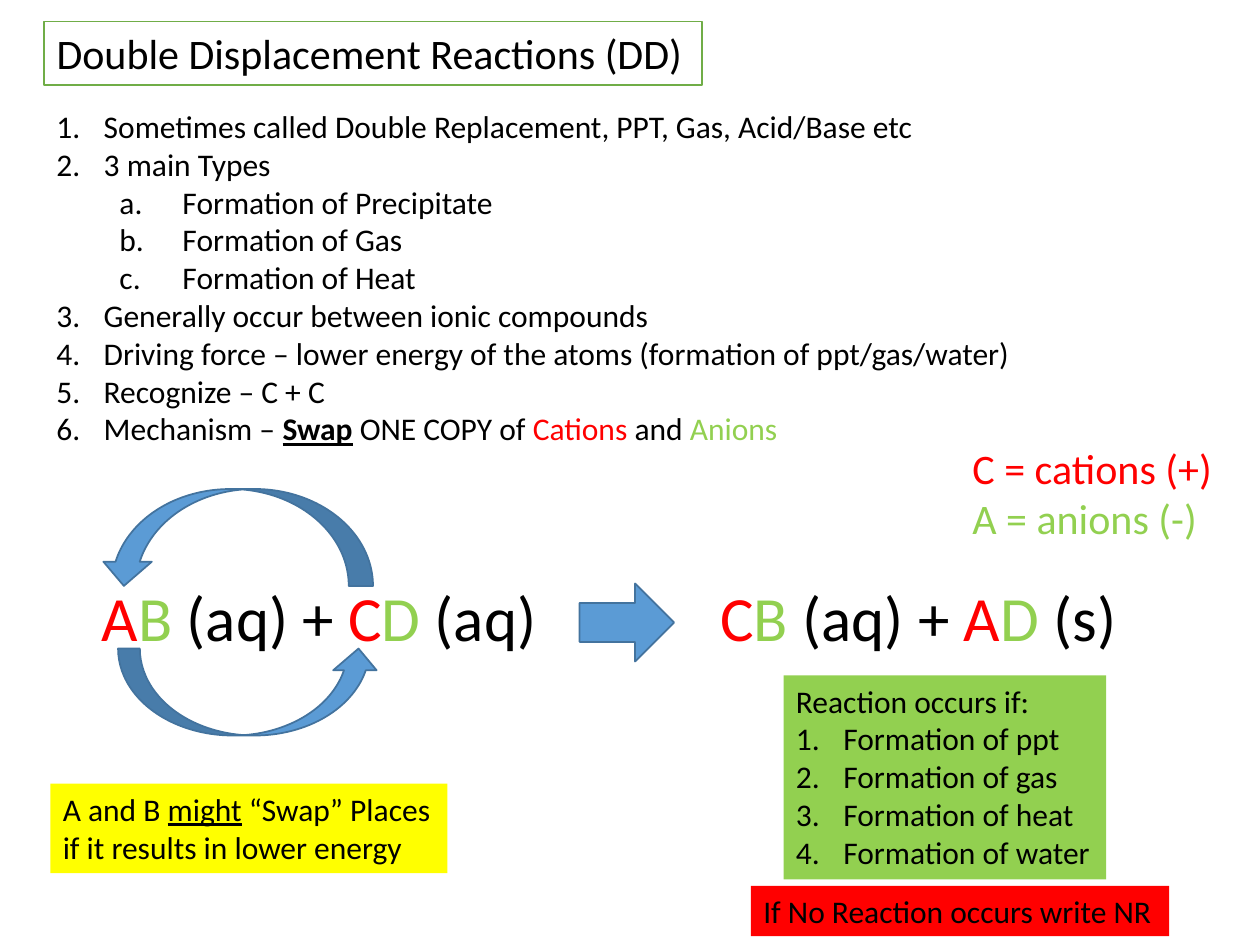
from dataclasses import dataclass
from typing import Optional

from lxml.etree import SubElement
from pptx import Presentation
from pptx.dml.color import RGBColor
from pptx.enum.shapes import MSO_SHAPE as Preset
from pptx.enum.text import MSO_AUTO_SIZE as AutoSize
from pptx.oxml.ns import qn
from pptx.util import Pt

BLACK, RED, GREEN, YELLOW, WHITE = "000000", "FF0000", "92D050", "FFFF00", "FFFFFF"
ARROW_FILL, ARROW_LINE, TITLE_LINE = "5B9BD5", "43739E", "70AD47"
INDENT_STEP, HANGING = 36, 27


@dataclass
class Run:
    text: str
    color: str = BLACK
    bold: bool = False
    underline: bool = False


@dataclass
class Line:
    runs: list[Run]
    numbering: Optional[str] = None
    level: int = 0


@dataclass
class TextBlock:
    box: tuple[float, float, float, float]
    size: int
    lines: list[Line]
    fill: Optional[str] = None
    outline: Optional[str] = None
    wrap: bool = False


@dataclass
class Arrow:
    preset: Preset
    box: tuple[float, float, float, float]
    rotation: int = 0


def rgb(color: str) -> RGBColor:
    return RGBColor.from_string(color)


def plain(text: str, color: str = BLACK) -> Line:
    return Line([Run(text, color)])


def numbered(*texts: str) -> list[Line]:
    return [Line([Run(text)], "arabicPeriod") for text in texts]


def lettered(*texts: str) -> list[Line]:
    return [Line([Run("\t" + text)], "alphaLcPeriod", 1) for text in texts]


def formula(first: str, second: str, state: str) -> Line:
    """Colour the cation and anion of two compounds such as AB + CD."""
    return Line([Run(first[0], RED), Run(first[1], GREEN), Run(" (aq) + "),
                 Run(second[0], RED), Run(second[1], GREEN), Run(f" ({state})")])


def set_numbering(paragraph, line: Line) -> None:
    paragraph.level = line.level
    properties = paragraph._p.get_or_add_pPr()
    properties.set("marL", str(Pt(HANGING + line.level * INDENT_STEP)))
    properties.set("indent", str(-Pt(HANGING)))
    SubElement(properties, qn("a:buFont"), typeface="+mj-lt")
    SubElement(properties, qn("a:buAutoNum"), type=line.numbering)


def draw_text(shapes, block: TextBlock) -> None:
    shape = shapes.add_textbox(*map(Pt, block.box))
    if block.fill:
        shape.fill.solid()
        shape.fill.fore_color.rgb = rgb(block.fill)
    if block.outline:
        shape.line.color.rgb = rgb(block.outline)
        shape.line.width = Pt(1)
    frame = shape.text_frame
    frame.word_wrap = block.wrap
    frame.auto_size = AutoSize.SHAPE_TO_FIT_TEXT
    for index, line in enumerate(block.lines):
        paragraph = frame.add_paragraph() if index else frame.paragraphs[0]
        if line.numbering:
            set_numbering(paragraph, line)
        for part in line.runs:
            run = paragraph.add_run()
            run.text = part.text
            font_format = {"name": "Calibri", "size": Pt(block.size),
                           "bold": part.bold, "underline": part.underline}
            for name, value in font_format.items():
                setattr(run.font, name, value)
            run.font.color.rgb = rgb(part.color)


def draw_arrow(shapes, arrow: Arrow) -> None:
    shape = shapes.add_shape(arrow.preset, *map(Pt, arrow.box))
    shape.shadow.inherit = False
    shape.rotation = arrow.rotation
    shape.fill.solid()
    shape.fill.fore_color.rgb = rgb(ARROW_FILL)
    shape.line.color.rgb = rgb(ARROW_LINE)
    shape.line.width = Pt(1)


TITLE = TextBlock((25.2, 12.3, 375.8, 36.2), 24,
                  [plain("Double Displacement Reactions (DD)")], WHITE, TITLE_LINE)
NOTES = TextBlock((25.2, 57.6, 669.6, 203.8), 18, [
    *numbered("Sometimes called Double Replacement, PPT, Gas, Acid/Base etc",
              "3 main Types"),
    *lettered("Formation of Precipitate", "Formation of Gas", "Formation of Heat"),
    *numbered("Generally occur between ionic compounds",
              "Driving force – lower energy of the atoms (formation of ppt/gas/water)",
              "Recognize – C + C"),
    Line([Run("Mechanism – "), Run("Swap", bold=True, underline=True),
          Run(" ONE COPY of "), Run("Cations", RED), Run(" and "),
          Run("Anions", GREEN)], "arabicPeriod"),
], wrap=True)
LEGEND = TextBlock((548.6, 249.1, 152.6, 65.5), 24,
                   [plain("C = cations (+)", RED), plain("A = anions (-)", GREEN)])
SWAP_NOTE = TextBlock((28.8, 447.8, 226.8, 51.1), 18, [
    Line([Run("A and B "), Run("might", underline=True), Run(" “Swap” Places")]),
    plain("if it results in lower energy"),
], YELLOW)
CONDITIONS = TextBlock((447.8, 385.9, 184.3, 116.6), 18, [
    plain("Reaction occurs if:"),
    *numbered("Formation of ppt", "Formation of gas",
              "Formation of heat", "Formation of water"),
], GREEN)
NO_REACTION = TextBlock((429.1, 506.2, 239, 28.8), 18,
                        [plain("If No Reaction occurs write NR")], RED)

REACTANTS = TextBlock((51.1, 326.9, 272.9, 51.1), 36,
                      [formula("AB", "CD", "aq")], wrap=True)
PRODUCTS = TextBlock((404.6, 326.9, 242.6, 51.1), 36,
                     [formula("CB", "AD", "s")], wrap=True)
ARROWS = [
    Arrow(Preset.RIGHT_ARROW, (331.2, 333.4, 54, 44.6)),
    Arrow(Preset.CURVED_UP_ARROW, (67.5, 370.6, 149.8, 49.7)),
    Arrow(Preset.CURVED_UP_ARROW, (56.9, 279.4, 156.2, 55.4), 180),
]


def main() -> None:
    presentation = Presentation()
    presentation.slide_width, presentation.slide_height = Pt(720), Pt(540)
    slide = presentation.slides.add_slide(presentation.slide_layouts[6])
    for block in (TITLE, NOTES, LEGEND, SWAP_NOTE):
        draw_text(slide.shapes, block)
    equation = slide.shapes.add_group_shape().shapes
    for block in (REACTANTS, PRODUCTS):
        draw_text(equation, block)
    for arrow in ARROWS:
        draw_arrow(equation, arrow)
    for block in (CONDITIONS, NO_REACTION):
        draw_text(slide.shapes, block)
    presentation.save("out.pptx")


if __name__ == "__main__":
    main()
